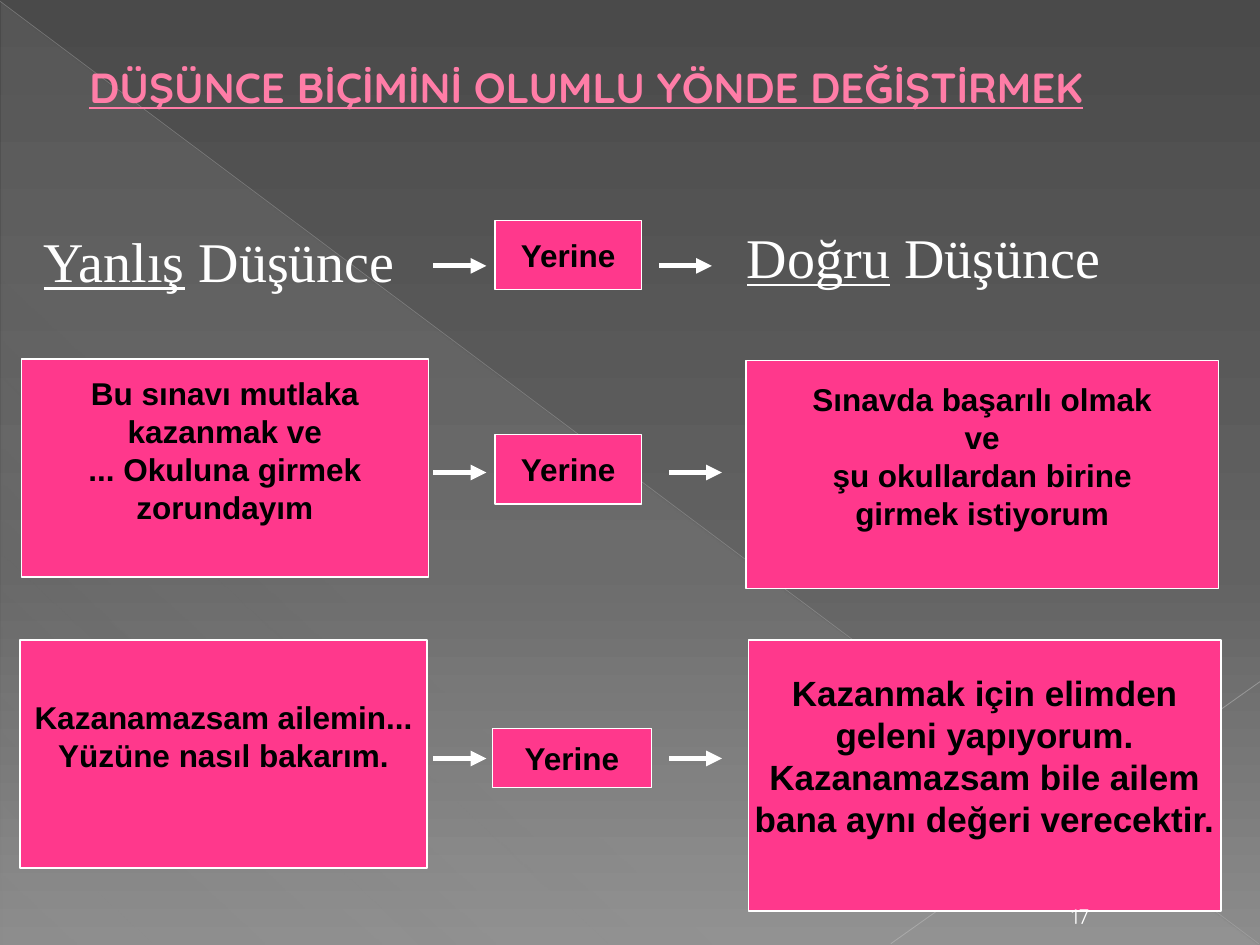
import pptx
import pptx.dml.color
import pptx.enum.shapes
import pptx.enum.text
import pptx.oxml
import pptx.oxml.ns
import pptx.util
from dataclasses import dataclass

Inches = pptx.util.Inches
Pt = pptx.util.Pt
qn = pptx.oxml.ns.qn
Align = pptx.enum.text.PP_ALIGN
Anchor = pptx.enum.text.MSO_ANCHOR
ShapeType = pptx.enum.shapes.MSO_SHAPE


@dataclass(frozen=True)
class Theme:
    box: str = "FF388C"
    title: str = "FF7DA7"
    dark: str = "000000"
    light: str = "FFFFFF"
    title_size: int = 24
    heading_size: int = 32
    body_size: int = 18
    large_size: int = 20
    number_size: int = 12
    title_font: str = "Quicksand"
    heading_font: str = "Times New Roman"
    body_font: str = "Arial"
    # Gradient stops: position, colour, opacity (percent)
    background: tuple = ((0, "4A4A4A", 100), (60, "626262", 100), (100, "8C8C8C", 100))
    triangle: tuple = ((0, "D2D2D2", 10), (70, "D2D2D2", 8), (100, "D2D2D2", 1))


THEME = Theme()


def rgb(color):
    return pptx.dml.color.RGBColor.from_string(color)


def replace_with_gradient(parent, stops, angle):
    """Swap the solid fill of a properties element for a linear gradient."""
    stop_xml = "".join(
        f'<a:gs pos="{position * 1000}"><a:srgbClr val="{color}">'
        f'<a:alpha val="{opacity * 1000}"/></a:srgbClr></a:gs>'
        for position, color, opacity in stops
    )
    gradient = pptx.oxml.parse_xml(
        f'<a:gradFill {pptx.oxml.ns.nsdecls("a")} rotWithShape="1"><a:gsLst>{stop_xml}</a:gsLst>'
        f'<a:lin ang="{angle * 60000}" scaled="0"/></a:gradFill>'
    )
    parent.replace(parent.find(qn("a:solidFill")), gradient)


def add_run(paragraph, text, font, size, color, bold=False, underline=False):
    run = paragraph.add_run()
    run.text = text
    run.font.name = font
    run.font.size = Pt(size)
    run.font.color.rgb = rgb(color)
    run.font.bold = bold
    run.font.underline = underline


def add_text_box(slide, left, top, width, height, anchor=Anchor.TOP):
    frame = slide.shapes.add_textbox(
        Inches(left), Inches(top), Inches(width), Inches(height)).text_frame
    frame.word_wrap = True
    frame.vertical_anchor = anchor
    return frame


def add_heading(slide, left, top, underlined, rest):
    paragraph = add_text_box(slide, left, top, 3.33, 0.63).paragraphs[0]
    style = (THEME.heading_font, THEME.heading_size, THEME.light)
    add_run(paragraph, underlined, *style, underline=True)
    add_run(paragraph, rest, *style)


def add_box(slide, left, top, width, height, lines, size=THEME.body_size, bottom=0.05):
    shape = slide.shapes.add_shape(
        ShapeType.RECTANGLE, Inches(left), Inches(top), Inches(width), Inches(height))
    shape.shadow.inherit = False
    shape.fill.solid()
    shape.fill.fore_color.rgb = rgb(THEME.box)
    shape.line.color.rgb = rgb(THEME.light)
    shape.line.width = Pt(0.75)
    frame = shape.text_frame
    frame.word_wrap = False
    frame.vertical_anchor = Anchor.MIDDLE
    frame.margin_bottom = Inches(bottom)
    for index, line in enumerate(lines):
        paragraph = frame.add_paragraph() if index else frame.paragraphs[0]
        paragraph.alignment = Align.CENTER
        add_run(paragraph, line, THEME.body_font, size, THEME.dark, bold=True)


def add_line(slide, start, end, color, width, opacity=100, arrow=False):
    line = slide.shapes.add_connector(
        pptx.enum.shapes.MSO_CONNECTOR.STRAIGHT, *map(Inches, start + end))
    line.line.color.rgb = rgb(color)
    line.line.width = Pt(width)
    properties = line.element.spPr
    outline = properties.find(qn("a:ln"))
    if opacity < 100:
        alpha = outline.find(".//" + qn("a:srgbClr")).makeelement(
            qn("a:alpha"), {"val": str(opacity * 1000)})
        outline.find(".//" + qn("a:srgbClr")).append(alpha)
    if arrow:
        outline.append(outline.makeelement(qn("a:tailEnd"), {"type": "triangle"}))
    properties.append(properties.makeelement(qn("a:effectLst"), {}))


def add_backdrop(slide):
    slide.background.fill.solid()
    slide.background.fill.fore_color.rgb = rgb(THEME.dark)
    replace_with_gradient(slide.element.find(".//" + qn("p:bgPr")), THEME.background, 90)

    triangle = slide.shapes.add_shape(
        ShapeType.RIGHT_TRIANGLE, Inches(0.01), Inches(0.02), Inches(9.98), Inches(7.48))
    triangle.shadow.inherit = False
    triangle.line.fill.background()
    triangle.fill.solid()
    triangle.fill.fore_color.rgb = rgb(THEME.light)
    replace_with_gradient(triangle.element.spPr, THEME.triangle, 133)

    add_line(slide, (0, 0.01), (9.99, 7.49), "BFBFBF", 0.39, opacity=35)
    add_line(slide, (10, 5.41), (7.07, 7.49), "C6C6C6", 0.47, opacity=45)


def main():
    presentation = pptx.Presentation()
    presentation.slide_width = Inches(10)
    presentation.slide_height = Inches(7.5)
    slide = presentation.slides.add_slide(presentation.slide_layouts[6])
    add_backdrop(slide)

    # Title
    title = add_text_box(slide, 0.08, 0.3, 9.75, 0.78, Anchor.MIDDLE)
    title.margin_left = Inches(0.63)
    add_run(title.paragraphs[0], "DÜŞÜNCE BİÇİMİNİ OLUMLU YÖNDE DEĞİŞTİRMEK",
            THEME.title_font, THEME.title_size, THEME.title, bold=True, underline=True)

    # Column headings
    add_heading(slide, 0.25, 1.75, "Yanlış", " Düşünce")
    add_heading(slide, 5.83, 1.72, "Doğru", " Düşünce")

    # Wrong and right thoughts, set above the middle by a deeper bottom margin
    add_box(slide, 0.17, 2.85, 3.23, 1.73,
            ["Bu sınavı mutlaka", "kazanmak ve", "... Okuluna girmek", "zorundayım"], bottom=0.34)
    add_box(slide, 5.92, 2.86, 3.75, 1.81,
            ["Sınavda başarılı olmak", "ve", "şu okullardan birine", "girmek istiyorum"],
            bottom=0.34)
    add_box(slide, 0.16, 5.08, 3.23, 1.81,
            ["Kazanamazsam ailemin...", "Yüzüne nasıl bakarım."], bottom=0.34)
    add_box(slide, 5.94, 5.08, 3.75, 2.15,
            ["Kazanmak için elimden", "geleni yapıyorum.", "Kazanamazsam bile ailem",
             "bana aynı değeri verecektir."], THEME.large_size, bottom=0.37)

    # "Yerine" boxes, each between two arrows
    rows = [
        ((3.93, 1.75, 1.16, 0.55), 2.11, 5.23),
        ((3.93, 3.45, 1.16, 0.55), 3.75, 5.31),
        ((3.91, 5.78, 1.26, 0.47), 6.02, 5.31),
    ]
    for bounds, arrow_y, right_arrow in rows:
        add_box(slide, *bounds, ["Yerine"])
        for left in (3.44, right_arrow):
            add_line(slide, (left, arrow_y), (left + 0.42, arrow_y), THEME.light, 3, arrow=True)

    # Slide number
    number = add_text_box(slide, 8.3, 7.09, 0.55, 0.33, Anchor.BOTTOM).paragraphs[0]
    number.alignment = Align.CENTER
    add_run(number, "17", THEME.title_font, THEME.number_size, THEME.light)

    presentation.save("out.pptx")


if __name__ == "__main__":
    main()
